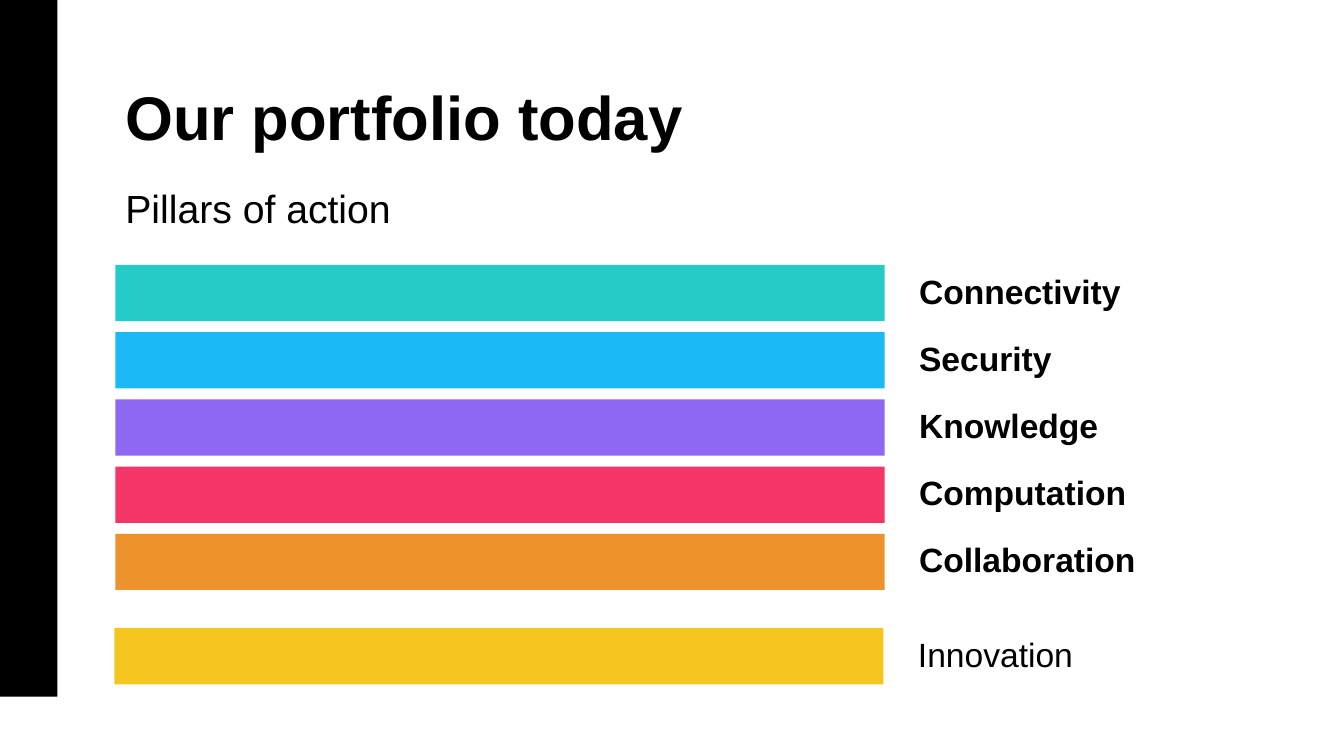
from dataclasses import dataclass

from pptx import Presentation
from pptx import util as u
from pptx.dml import color
from pptx.enum import shapes, text


@dataclass(frozen=True)
class Theme:
    font: str = "Arial"
    ink: str = "000000"
    title: int = 44
    lead: int = 28
    label: int = 24


THEME = Theme()
PILLARS = [
    ("Connectivity", "25CCC7"),
    ("Security", "1CB9F7"),
    ("Knowledge", "8C68F3"),
    ("Computation", "F33667"),
    ("Collaboration", "EE932B"),
]
LEFT, WIDTH, HEIGHT = 82.5, 549.4, 40.2
TOP, STEP = 189.3, 48
LABEL_GAP, LABEL_WIDTH = 17.5, 222.5


def apply(target, values):
    for name, value in values.items():
        setattr(target, name, value)


def add_bar(slide, box, tint):
    bar = slide.shapes.add_shape(
        shapes.MSO_SHAPE.RECTANGLE, *map(u.Pt, box))
    bar.shadow.inherit = False
    bar.fill.solid()
    bar.fill.fore_color.rgb = color.RGBColor.from_string(tint)
    bar.line.fill.background()


def add_text(slide, box, words, size, bold, anchor):
    frame = slide.shapes.add_textbox(*map(u.Pt, box)).text_frame
    apply(frame, {"word_wrap": True, "vertical_anchor": anchor})
    para = frame.paragraphs[0]
    para.line_spacing = 0.9
    run = para.add_run()
    run.text = words
    apply(run.font, {"name": THEME.font, "size": u.Pt(size), "bold": bold})
    run.font.color.rgb = color.RGBColor.from_string(THEME.ink)


def add_pillar(slide, left, top, words, tint, bold):
    add_bar(slide, (left, top, WIDTH, HEIGHT), tint)
    box = (left + WIDTH + LABEL_GAP, top, LABEL_WIDTH, HEIGHT)
    add_text(slide, box, words, THEME.label, bold, text.MSO_ANCHOR.MIDDLE)


def main():
    deck = Presentation()
    apply(deck, {"slide_width": u.Pt(960), "slide_height": u.Pt(540)})
    slide = deck.slides.add_slide(deck.slide_layouts[6])
    add_bar(slide, (0, -1.4, 41, 499), THEME.ink)
    add_text(slide, (LEFT, 29.5, 720.7, 84.2), "Our portfolio today",
             THEME.title, True, text.MSO_ANCHOR.BOTTOM)
    add_text(slide, (LEFT, 131.8, WIDTH, 39.6), "Pillars of action",
             THEME.lead, False, text.MSO_ANCHOR.TOP)
    for row, (words, tint) in enumerate(PILLARS):
        add_pillar(slide, LEFT, TOP + row * STEP, words, tint, True)
    add_pillar(slide, 81.7, 448.6, "Innovation", "F4C61E", False)
    deck.save("out.pptx")


if __name__ == "__main__":
    main()
